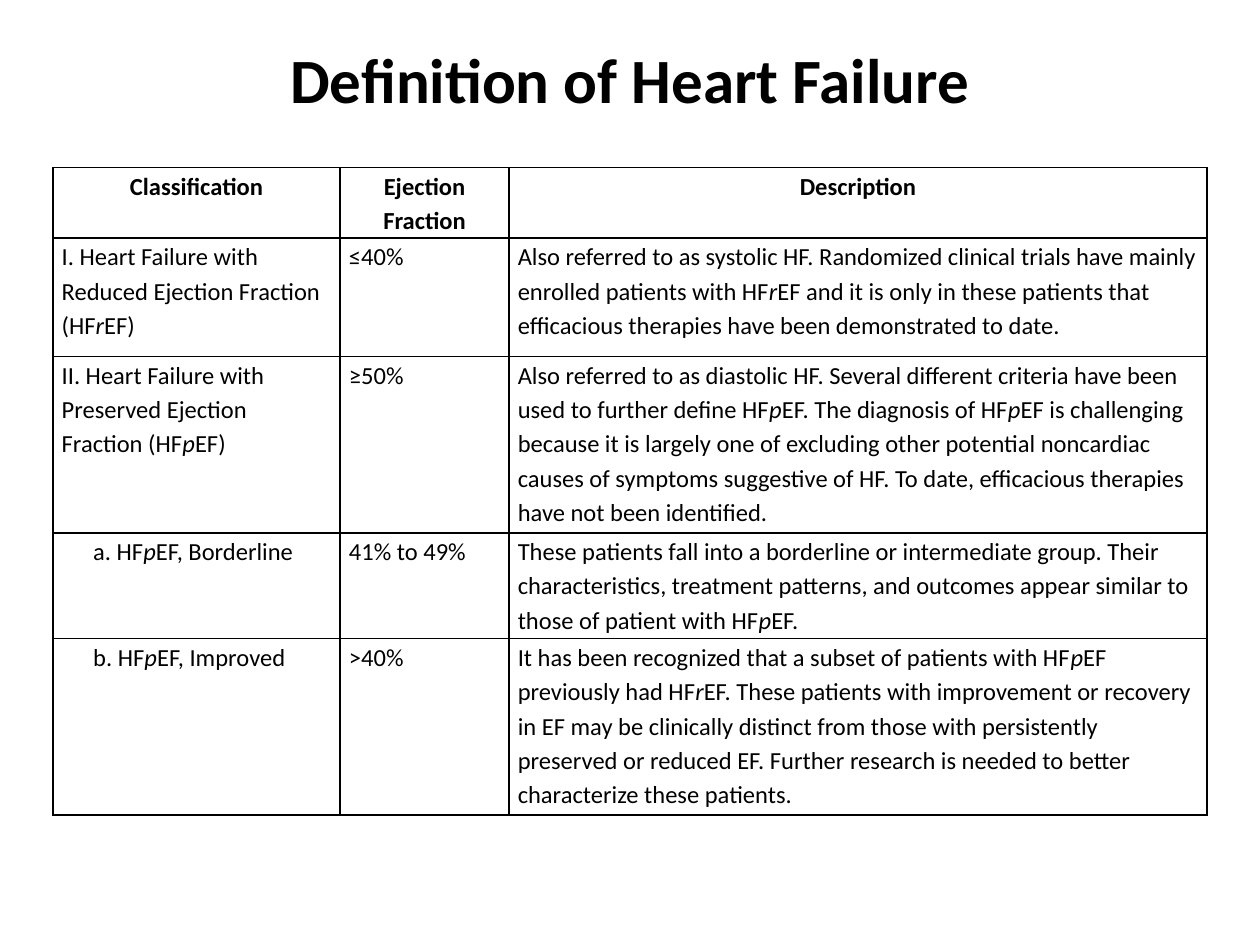
from lxml.etree import SubElement
from pptx import Presentation
from pptx.dml.color import RGBColor
from pptx.enum.text import MSO_ANCHOR, PP_ALIGN
from pptx.oxml.ns import qn
from pptx.util import Inches, Pt

THEME = {"font": "Calibri", "ink": "000000", "paper": "FFFFFF",
         "title": 36, "body": 14, "border": 1}

TITLE = "Definition of Heart Failure"
HEADER = ("Classification", "Ejection Fraction", "Description")
# Text between asterisks is italic.
CLASSES = [
    ("I. Heart Failure with Reduced Ejection Fraction (HF*r*EF)", "≤40%",
     "Also referred to as systolic HF. Randomized clinical trials have mainly "
     "enrolled patients with HF*r*EF and it is only in these patients that "
     "efficacious therapies have been demonstrated to date."),
    ("II. Heart Failure with Preserved Ejection Fraction (HF*p*EF)", "≥50%",
     "Also referred to as diastolic HF. Several different criteria have been "
     "used to further define HF*p*EF. The diagnosis of HF*p*EF is challenging "
     "because it is largely one of excluding other potential noncardiac causes "
     "of symptoms suggestive of HF. To date, efficacious therapies have not "
     "been identified."),
    ("a. HF*p*EF, Borderline", "41% to 49%",
     "These patients fall into a borderline or intermediate group. Their "
     "characteristics, treatment patterns, and outcomes appear similar to "
     "those of patient with HF*p*EF."),
    ("b. HF*p*EF, Improved", ">40%",
     "It has been recognized that a subset of patients with HF*p*EF previously "
     "had HF*r*EF. These patients with improvement or recovery in EF may be "
     "clinically distinct from those with persistently preserved or reduced "
     "EF. Further research is needed to better characterize these patients."),
]
SUBCLASS_PREFIXES = ("a.", "b.")
COL_WIDTHS = (2.28, 1.34, 5.54)
ROW_HEIGHTS = (0.56, 0.94, 1.4, 0.84, 1.4)


def write(p, text, size, bold=False, align=PP_ALIGN.LEFT):
    """Fill a paragraph, setting the parts between asterisks in italic."""
    p.alignment = align
    p.font.name = THEME["font"]
    p.font.size = Pt(size)
    p.font.bold = bold
    p.font.color.rgb = RGBColor.from_string(THEME["ink"])
    for i, part in enumerate(text.split("*")):
        r = p.add_run()
        r.text = part
        if i % 2:
            r.font.italic = True


def add_borders(cell):
    tc_pr = cell._tc.get_or_add_tcPr()
    for side in ("lnL", "lnR", "lnT", "lnB"):
        ln = SubElement(tc_pr, qn(f"a:{side}"), w=str(Pt(THEME["border"])))
        fill = SubElement(ln, qn("a:solidFill"))
        SubElement(fill, qn("a:srgbClr"), val=THEME["ink"])


def fill_cell(cell, text, is_header):
    cell.margin_left = cell.margin_right = Inches(0.07)
    cell.margin_top = cell.margin_bottom = 0
    add_borders(cell)
    cell.fill.solid()
    cell.fill.fore_color.rgb = RGBColor.from_string(THEME["paper"])
    p = cell.text_frame.paragraphs[0]
    write(p, text, THEME["body"], is_header,
          PP_ALIGN.CENTER if is_header else PP_ALIGN.LEFT)
    p.line_spacing = 1.15
    if text.startswith(SUBCLASS_PREFIXES):
        p._p.get_or_add_pPr().set("marL", str(Inches(0.25)))


def add_title(slide):
    sp = slide.shapes.add_textbox(Inches(0.5), 0, Inches(9), Inches(1.25))
    tf = sp.text_frame
    tf.word_wrap = True
    tf.vertical_anchor = MSO_ANCHOR.MIDDLE
    write(tf.paragraphs[0], TITLE, THEME["title"], True, PP_ALIGN.CENTER)


def add_class_table(slide):
    rows = [HEADER, *CLASSES]
    table = slide.shapes.add_table(
        len(rows), len(HEADER), Inches(0.42), Inches(1.33),
        Inches(sum(COL_WIDTHS)), Inches(sum(ROW_HEIGHTS))).table
    for col, width in zip(table.columns, COL_WIDTHS):
        col.width = Inches(width)
    for row, height, texts in zip(table.rows, ROW_HEIGHTS, rows):
        row.height = Inches(height)
        for cell, text in zip(row.cells, texts):
            fill_cell(cell, text, texts is HEADER)


def main():
    prs = Presentation()
    prs.slide_width, prs.slide_height = Inches(10), Inches(7.5)
    slide = prs.slides.add_slide(prs.slide_layouts[6])
    add_title(slide)
    add_class_table(slide)
    prs.save("out.pptx")


if __name__ == "__main__":
    main()
